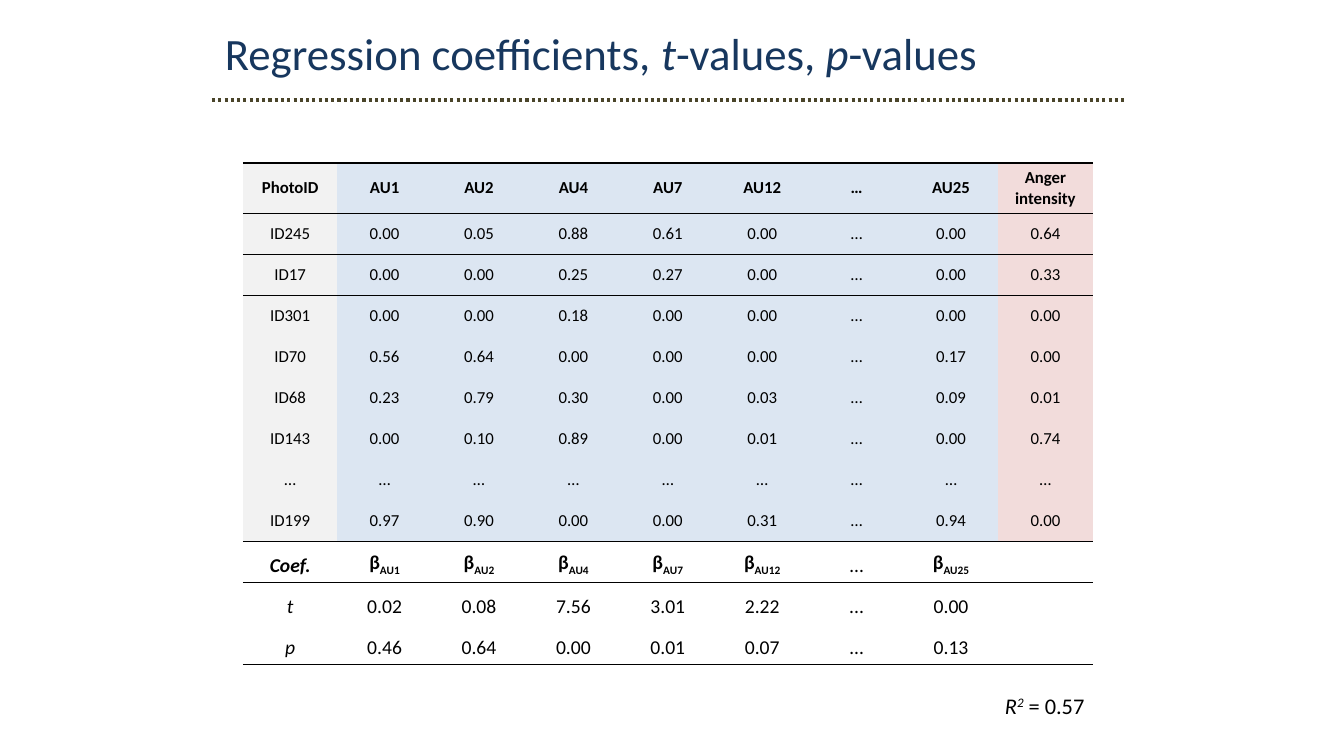
from lxml import etree
from pptx import Presentation
from pptx.dml.color import RGBColor
from pptx.enum.dml import MSO_LINE as Dash
from pptx.enum.shapes import MSO_CONNECTOR as Link
from pptx.enum.text import MSO_ANCHOR as Anchor, MSO_AUTO_SIZE as Fit, PP_ALIGN as Align
from pptx.oxml.ns import qn
from pptx.util import Pt

EMU = 914400 / 100.8
PLAIN = "{2D5ABB26-0587-4C30-8999-92F81FD0307C}"  # table style without grid


def px(*vals):
    """Turn px lengths into a list of EMU."""
    return [round(v * EMU) for v in vals]


def write(par, text, size=12, color="000000", bold=False, italic=False, base=0):
    """Add a run; base is the baseline shift in percent."""
    run = par.add_run()
    run.text = text
    font = run.font
    font.name, font.size = "Calibri", Pt(size)
    font.bold, font.italic = bold, italic
    font.color.rgb = RGBColor.from_string(color)
    if base:
        font._element.set("baseline", str(base * 1000))


deck = Presentation()
deck.slide_width, deck.slide_height = px(1344, 756)
slide = deck.slides.add_slide(deck.slide_layouts[6])
shapes = slide.shapes

# Title
title = shapes.add_textbox(*px(215, 21, 886, 65)).text_frame
title.word_wrap, title.auto_size = True, Fit.SHAPE_TO_FIT_TEXT
for part, slant in [("Regression coefficients, ", False), ("t", True),
                    ("-values, ", False), ("p", True), ("-values", False)]:
    write(title.paragraphs[0], part, size=32, color="17375E", italic=slant)

# Dotted rule
rule = shapes.add_connector(Link.STRAIGHT, *px(212, 100, 1125, 100))
rule.line.color.rgb = RGBColor.from_string("4A452A")
rule.line.width = Pt(2.25)
rule.line.dash_style = Dash.ROUND_DOT
etree.SubElement(rule._element.spPr, qn("a:effectLst"))

# Data table
DATA = """PhotoID|AU1|AU2|AU4|AU7|AU12|…|AU25|Anger intensity
ID245|0.00|0.05|0.88|0.61|0.00|…|0.00|0.64
ID17|0.00|0.00|0.25|0.27|0.00|…|0.00|0.33
ID301|0.00|0.00|0.18|0.00|0.00|…|0.00|0.00
ID70|0.56|0.64|0.00|0.00|0.00|…|0.17|0.00
ID68|0.23|0.79|0.30|0.00|0.03|…|0.09|0.01
ID143|0.00|0.10|0.89|0.00|0.01|…|0.00|0.74
…|…|…|…|…|…|…|…|…
ID199|0.97|0.90|0.00|0.00|0.31|…|0.94|0.00
Coef.|βAU1|βAU2|βAU4|βAU7|βAU12|…|βAU25|
t|0.02|0.08|7.56|3.01|2.22|...|0.00|
p|0.46|0.64|0.00|0.01|0.07|…|0.13|"""
rows = [line.split("|") for line in DATA.split("\n")]
fills = ["F2F2F2"] + ["DCE6F2"] * 7 + ["F2DCDB"]
rules = {0: 1, 1: 1, 2: 1.5, 9: 1, 12: 1}  # row edge: line width in points
stats = 9  # first row of the statistics

frame = shapes.add_table(len(rows), len(fills), *px(243, 163, 850, 41 * len(rows)))
table = frame.table
table.first_row = table.horz_banding = False
next(frame._element.iter(qn("a:tableStyleId"))).text = PLAIN

for r, row in enumerate(rows):
    for c, text in enumerate(row):
        cell = table.cell(r, c)
        props = cell._tc.get_or_add_tcPr()
        for tag, edge in [("a:lnT", r), ("a:lnB", r + 1)]:
            if edge in rules:
                side = etree.SubElement(props, qn(tag), w=str(Pt(rules[edge])))
                solid = etree.SubElement(side, qn("a:solidFill"))
                etree.SubElement(solid, qn("a:srgbClr"), val="000000")
        par = cell.text_frame.paragraphs[0]
        par.alignment = Align.CENTER
        if r < stats:
            cell.fill.solid()
            cell.fill.fore_color.rgb = RGBColor.from_string(fills[c])
            cell.vertical_anchor = Anchor.MIDDLE
            write(par, text, bold=r == 0)
            continue
        cell.fill.background()
        cell.vertical_anchor = Anchor.BOTTOM
        if text.startswith("β"):
            write(par, "β", size=14, bold=True)
            write(par, text[1:], size=14, bold=True, base=-25)
        elif text:
            write(par, text, size=14, bold=text == "Coef.", italic=c == 0)

# Model fit
note = shapes.add_textbox(*px(995, 687, 106, 37)).text_frame
note.word_wrap, note.auto_size = False, Fit.SHAPE_TO_FIT_TEXT
par = note.paragraphs[0]
write(par, "R", size=16, italic=True)
write(par, "2", size=16, italic=True, base=30)
write(par, " = 0.57", size=16)

deck.save("out.pptx")
